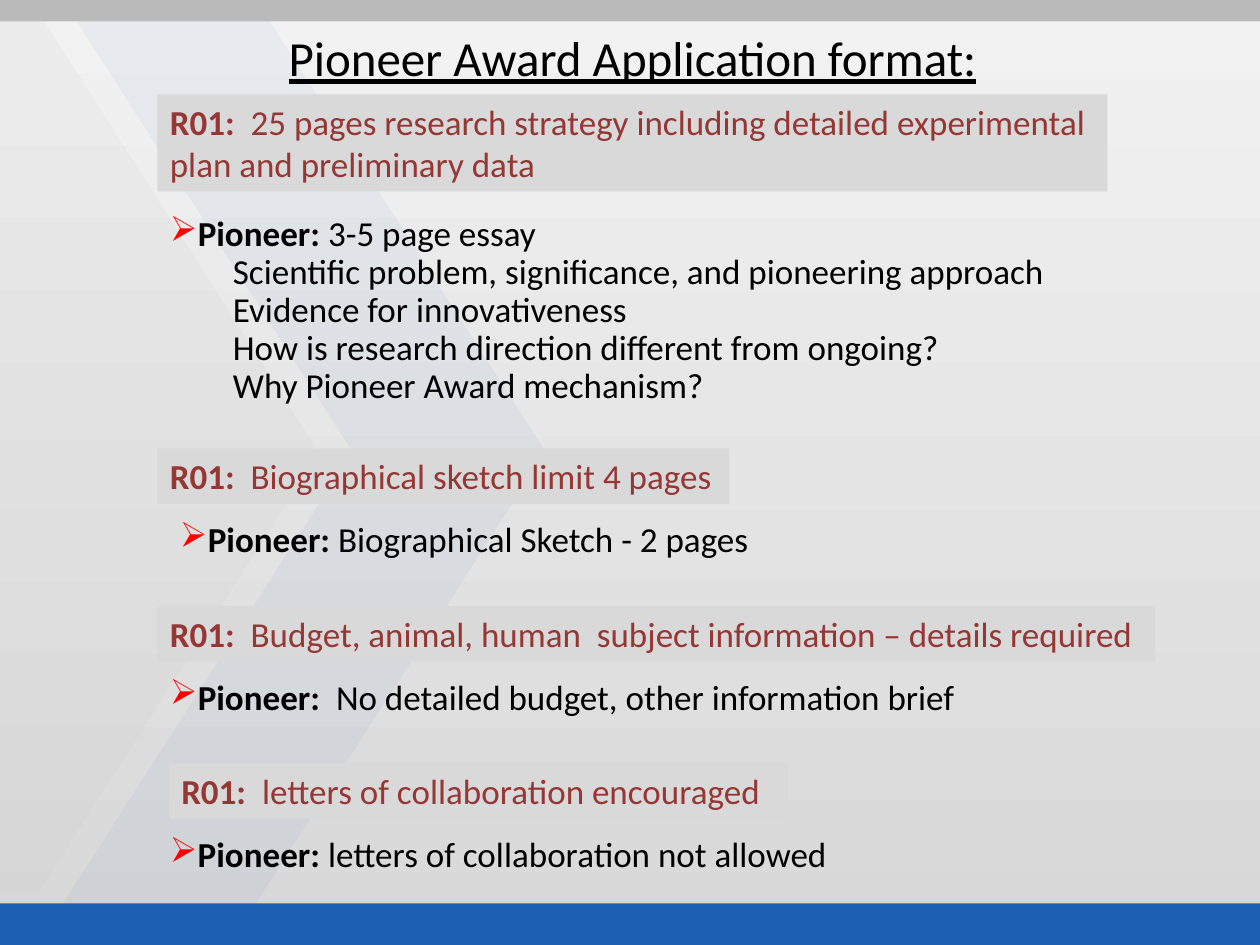
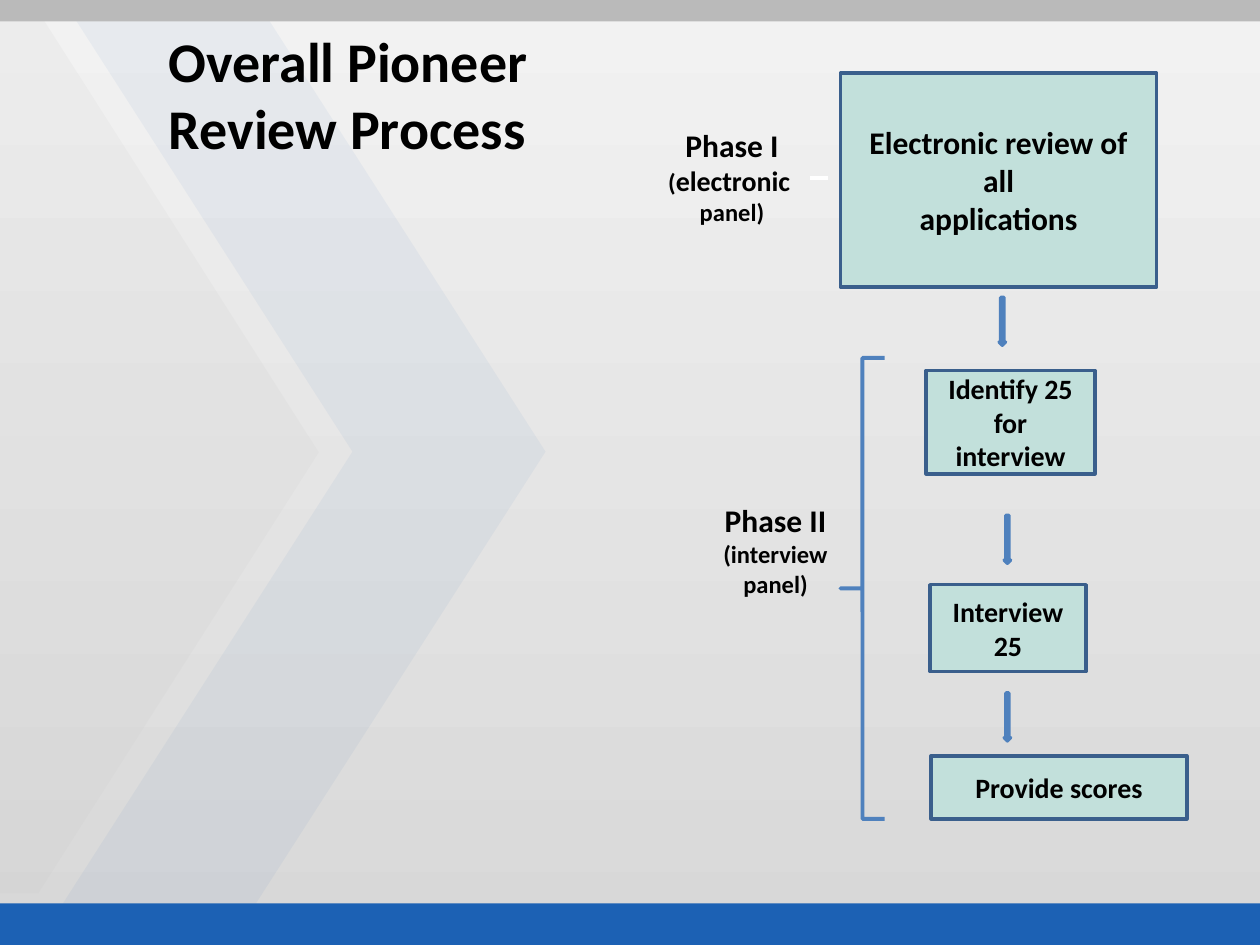
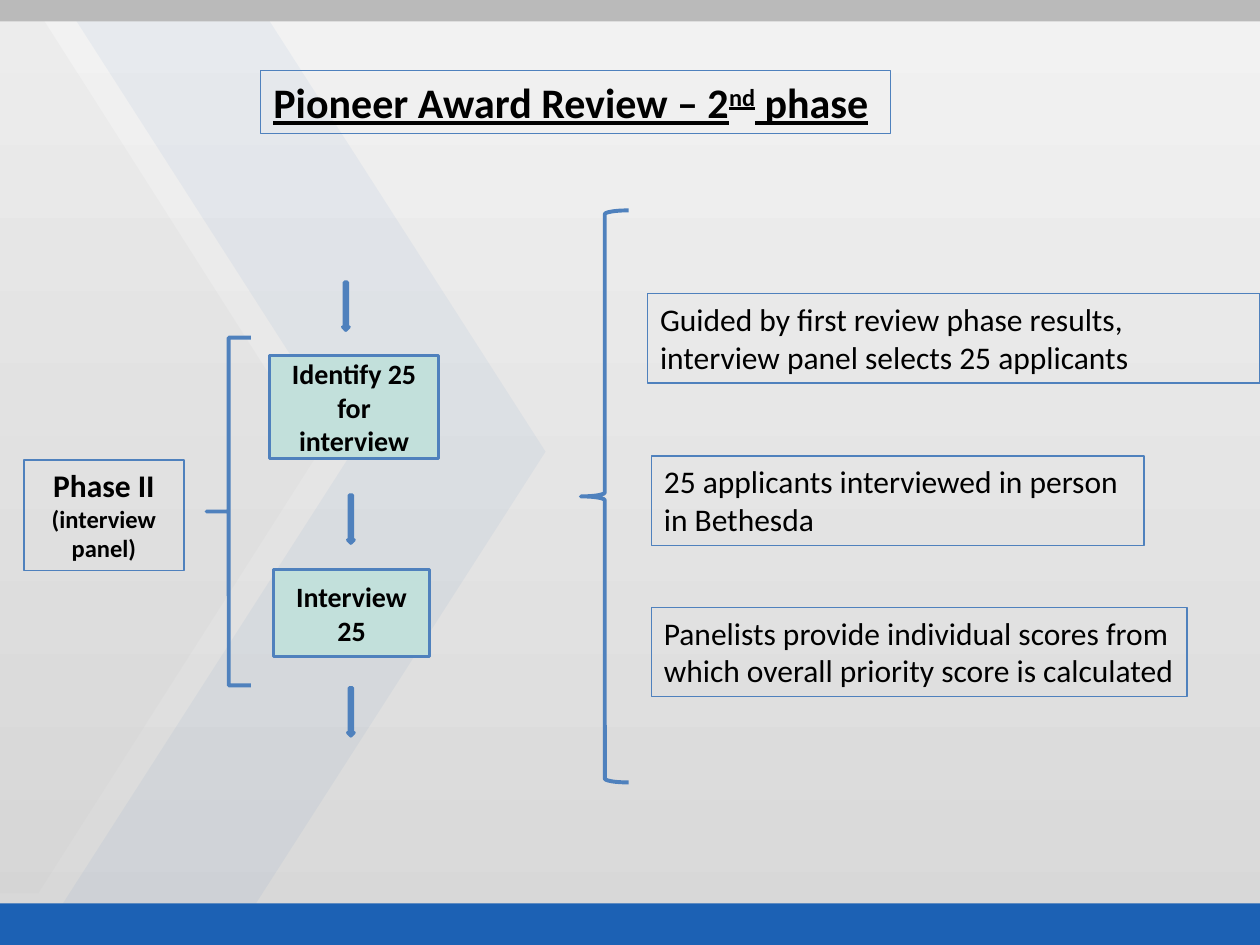
"""Build three slides on the Pioneer Award application and its review."""
from lxml import etree
from pptx import Presentation
from pptx.dml.color import RGBColor
from pptx.enum.shapes import MSO_CONNECTOR, MSO_SHAPE
from pptx.enum.text import MSO_ANCHOR, MSO_AUTO_SIZE, PP_ALIGN
from pptx.oxml.ns import qn
from pptx.util import Inches, Pt

RECTANGLE = MSO_SHAPE.RECTANGLE
CHEVRON = MSO_SHAPE.CHEVRON
PENTAGON = MSO_SHAPE.PENTAGON
DOWN_ARROW = MSO_SHAPE.DOWN_ARROW
LEFT_BRACE = MSO_SHAPE.LEFT_BRACE
STRAIGHT = MSO_CONNECTOR.STRAIGHT
TOP, MIDDLE = MSO_ANCHOR.TOP, MSO_ANCHOR.MIDDLE
LEFT, CENTER = PP_ALIGN.LEFT, PP_ALIGN.CENTER
NO_RESIZE = MSO_AUTO_SIZE.NONE

FONT = "Calibri"
BLACK = RGBColor(0x00, 0x00, 0x00)
WHITE = RGBColor(0xFF, 0xFF, 0xFF)
RED = RGBColor(0xFF, 0x00, 0x00)
MAROON = RGBColor(0x95, 0x37, 0x35)
PANEL_GRAY = RGBColor(0xD9, 0xD9, 0xD9)
MINT = RGBColor(0xC2, 0xE0, 0xDB)
NAVY = RGBColor(0x3A, 0x5F, 0x8C)
BLUE = RGBColor(0x4F, 0x81, 0xBD)
BAND_BLUE = RGBColor(0x1C, 0x61, 0xB4)
BAND_GRAY = RGBColor(0xBA, 0xBA, 0xBA)
POINTER_GRAY = RGBColor(0xBF, 0xBF, 0xBF)
GRADIENT = (RGBColor(0xD8, 0xD8, 0xD8), RGBColor(0xF2, 0xF2, 0xF2))

BACKDROP = [
    (RECTANGLE, (0, 0, 10, 7.5), None, None, None),
    (RECTANGLE, (0, 7.17, 10, 0.33), BAND_BLUE, None, None),
    (CHEVRON, (0.5, 0, 3.83, 7.17), BAND_BLUE, 0.6, 5),
    (PENTAGON, (0, 0.09, 2.53, 7), POINTER_GRAY, 0.88, 10),
    (RECTANGLE, (0, 0, 10, 0.17), BAND_GRAY, None, None),
]

ESSAY_TOPICS = [
    "Scientific problem, significance, and pioneering approach",
    "Evidence for innovativeness",
    "How is research direction different from ongoing?",
    "Why Pioneer Award mechanism?",
]
STRATEGY = ["25 pages research strategy including detailed experimental",
            "plan and preliminary data"]
COMPARISONS = [
    ("Biographical sketch limit 4 pages", 1.25, 4.54,
     "Pioneer: ", "Biographical Sketch - 2 pages", 1.33, 4.82),
    ("Budget, animal, human  subject information – details required", 1.25, 7.92,
     "Pioneer:  ", "No detailed budget, other information brief", 1.25, 6.55),
    ("letters of collaboration encouraged", 1.34, 4.91,
     "Pioneer: ", "letters of collaboration not allowed", 1.25, 5.47),
]
COMPARISON_TOP, COMPARISON_STEP, ANSWER_OFFSET, ROW_HEIGHT = 3.56, 1.25, 0.5, 0.44

BOLD_14 = {"size": Pt(14), "bold": True}
BOLD_16 = {"size": Pt(16), "bold": True}
BOLD_18 = {"size": Pt(18), "bold": True}
PLAIN_18 = {"size": Pt(18)}
PLAIN_20 = {"size": Pt(20)}
BOLD_20 = {"size": Pt(20), "bold": True}
TITLE_28 = {"size": Pt(28), "underline": True}
TITLE_32 = {"size": Pt(32), "bold": True}
TITLE_24 = {"size": Pt(24), "bold": True, "underline": True}

PHASE_ONE = [[("Phase I", BOLD_18)],
             [("(", BOLD_14), ("electronic", BOLD_16), (" ", BOLD_14)],
             [("panel)", BOLD_14)]]
PHASE_TWO = [[("Phase II", BOLD_18)], [("(interview panel)", BOLD_14)]]
OUTCOMES = [
    ((5.14, 2.33, 4.86, 0.71), True,
     ["Guided by first review phase results, interview panel selects 25 applicants"]),
    ((5.17, 3.62, 3.91, 0.71), False,
     ["25 applicants interviewed in person", "in Bethesda"]),
    ((5.17, 4.82, 4.25, 0.71), False,
     ["Panelists provide individual scores from",
      "which overall priority score is calculated"]),
]


def inches(values):
    return [Inches(value) for value in values]


def lines(texts, style):
    return [[(text, style)] for text in texts]


def write(shape, paragraphs, color=BLACK, align=LEFT, anchor=TOP, wrap=True):
    frame = shape.text_frame
    for name, value in {"auto_size": NO_RESIZE, "word_wrap": wrap,
                        "vertical_anchor": anchor}.items():
        setattr(frame, name, value)
    for index, runs in enumerate(paragraphs):
        paragraph = frame.add_paragraph() if index else frame.paragraphs[0]
        paragraph.alignment = align
        for text, style in runs:
            run = paragraph.add_run()
            run.text = text
            for name, value in {"name": FONT, "bold": False, **style}.items():
                setattr(run.font, name, value)
            run.font.color.rgb = color
    return frame


def add_shape(slide, kind, place, fill=None, line=None, width=2, adjust=None):
    shape = slide.shapes.add_shape(kind, *inches(place))
    shape.shadow.inherit = False
    if fill is None:
        shape.fill.background()
    else:
        shape.fill.solid()
        shape.fill.fore_color.rgb = fill
    if line is None:
        shape.line.fill.background()
    else:
        shape.line.color.rgb = line
        shape.line.width = Pt(width)
    if adjust is not None:
        shape.adjustments[0] = adjust
    return shape


def add_label(slide, place, paragraphs, **layout):
    return write(slide.shapes.add_textbox(*inches(place)), paragraphs, **layout)


def add_step(slide, place, paragraphs, outline=NAVY):
    step = add_shape(slide, RECTANGLE, place, MINT, outline)
    write(step, paragraphs, align=CENTER, anchor=MIDDLE)


def add_arrow(slide, left, top):
    add_shape(slide, DOWN_ARROW, (left, top, 0.05, 0.38), BLUE, BLUE)


def add_brace(slide, place, curl=0):
    add_shape(slide, LEFT_BRACE, place, line=BLUE, width=2.25, adjust=curl)


def add_interview_steps(slide, left, top, arrow_tops, outline):
    add_step(slide, (left, top, 1.34, 0.82),
             lines(["Identify 25 for interview"], BOLD_16), outline)
    add_step(slide, (left + 0.03, top + 1.7, 1.24, 0.69),
             lines(["Interview", "25"], BOLD_16), outline)
    add_arrow(slide, left + 0.58, top - 0.58)
    for arrow_top in arrow_tops:
        add_arrow(slide, left + 0.62, arrow_top)


def set_bullet(paragraph):
    properties = paragraph._p.get_or_add_pPr()
    color = etree.SubElement(properties, qn("a:buClr"))
    etree.SubElement(color, qn("a:srgbClr")).set("val", str(RED))
    etree.SubElement(properties, qn("a:buChar")).set("char", "➢")


def add_title_slide(presentation, place, paragraphs, wrap=True):
    slide = presentation.slides.add_slide(presentation.slide_layouts[5])
    title = slide.shapes.title
    title.left, title.top, title.width, title.height = inches(place)
    write(title, paragraphs, wrap=wrap)
    return slide


def add_backdrop(presentation, slide):
    tree = presentation.slide_master.element.cSld.spTree
    for index, (kind, place, fill, adjust, opacity) in enumerate(BACKDROP):
        shape = add_shape(slide, kind, place, fill, adjust=adjust)
        if fill is None:
            shape.fill.gradient()
            shape.fill.gradient_angle = 90
            for stop, color in zip(shape.fill.gradient_stops, GRADIENT):
                stop.color.rgb = color
        if opacity:
            color = shape.element.spPr.find(".//" + qn("a:srgbClr"))
            etree.SubElement(color, qn("a:alpha")).set("val", str(opacity * 1000))
        shape.element.nvSpPr.cNvPr.set("id", str(100 + index))
        tree.insert(2 + index, shape.element)


def add_requirement(slide, place, texts):
    paragraphs = lines(texts, PLAIN_20)
    paragraphs[0].insert(0, ("R01:  ", BOLD_20))
    panel = add_shape(slide, RECTANGLE, place, PANEL_GRAY)
    write(panel, paragraphs, color=MAROON, wrap=False)


def add_answer(slide, place, label, text, topics=(), wrap=False):
    paragraphs = [[(label, BOLD_20), (text, PLAIN_20)], *lines(topics, PLAIN_20)]
    frame = add_label(slide, place, paragraphs, wrap=wrap)
    set_bullet(frame.paragraphs[0])
    for paragraph in frame.paragraphs[1:]:
        paragraph.level = 1
        paragraph._p.get_or_add_pPr().set("marL", str(Inches(0.5)))
    if topics:
        for paragraph in frame.paragraphs:
            paragraph.line_spacing = 0.9


def build_format(presentation):
    slide = add_title_slide(presentation, (2.19, 0.22, 7.81, 0.87),
                            lines(["Pioneer Award Application format:"], TITLE_28))
    slide.shapes.title.text_frame.margin_top = 0
    add_backdrop(presentation, slide)
    add_requirement(slide, (1.25, 0.75, 7.54, 0.77), STRATEGY)
    add_answer(slide, (1.25, 1.67, 8.75, 1.62), "Pioneer: ", "3-5 page essay",
               ESSAY_TOPICS, wrap=True)
    for index, comparison in enumerate(COMPARISONS):
        requirement, left, width, label, answer, answer_left, answer_width = comparison
        top = COMPARISON_TOP + index * COMPARISON_STEP
        add_requirement(slide, (left, top, width, ROW_HEIGHT), [requirement])
        add_answer(slide, (answer_left, top + ANSWER_OFFSET, answer_width, ROW_HEIGHT),
                   label, answer)


def build_process(presentation):
    slide = add_title_slide(presentation, (1.24, 0.16, 3.18, 1.18),
                            lines(["Overall Pioneer", "Review Process"], TITLE_32),
                            wrap=False)
    add_step(slide, (6.67, 0.58, 2.51, 1.7),
             lines(["Electronic review of all", "applications"], BOLD_18))
    add_interview_steps(slide, 7.35, 2.94, (4.09, 5.5), NAVY)
    add_step(slide, (7.39, 6, 2.03, 0.5), lines(["Provide scores"], BOLD_16))
    add_label(slide, (4.96, 0.95, 1.7, 0.91), PHASE_ONE, align=CENTER)
    add_label(slide, (5.52, 3.93, 1.27, 0.88), PHASE_TWO, align=CENTER)
    add_brace(slide, (6.67, 2.84, 0.35, 3.66))
    dash = slide.shapes.add_connector(STRAIGHT, *inches((6.43, 1.41, 6.57, 1.41)))
    dash.line.color.rgb = WHITE
    dash.line.width = Pt(2.25)
    etree.SubElement(dash.element.spPr, qn("a:effectLst"))


def build_second_phase(presentation):
    heading = [[("Pioneer Award Review – 2", TITLE_24), ("nd", TITLE_24),
                (" phase", TITLE_24)]]
    slide = add_title_slide(presentation, (2.07, 0.56, 5, 0.5), heading, wrap=False)
    title = slide.shapes.title
    title.line.color.rgb = BLUE
    title.line.width = Pt(0.75)
    ordinal = title.text_frame.paragraphs[0].runs[1]
    ordinal._r.get_or_add_rPr().set("baseline", "30000")
    add_interview_steps(slide, 2.14, 2.82, (3.93, 5.46), BLUE)
    add_brace(slide, (1.64, 2.68, 0.35, 2.76))
    phase = add_shape(slide, RECTANGLE, (0.19, 3.65, 1.27, 0.88), line=BLUE, width=0.75)
    write(phase, PHASE_TWO, align=CENTER)
    for place, wrap, texts in OUTCOMES:
        outcome = add_shape(slide, RECTANGLE, place, line=BLUE, width=0.75)
        write(outcome, lines(texts, PLAIN_18), wrap=wrap)
    add_brace(slide, (4.61, 1.67, 0.38, 4.54), curl=0.08)


def main():
    presentation = Presentation()
    presentation.slide_width, presentation.slide_height = inches((10, 7.5))
    build_format(presentation)
    build_process(presentation)
    build_second_phase(presentation)
    presentation.save("out.pptx")


if __name__ == "__main__":
    main()
